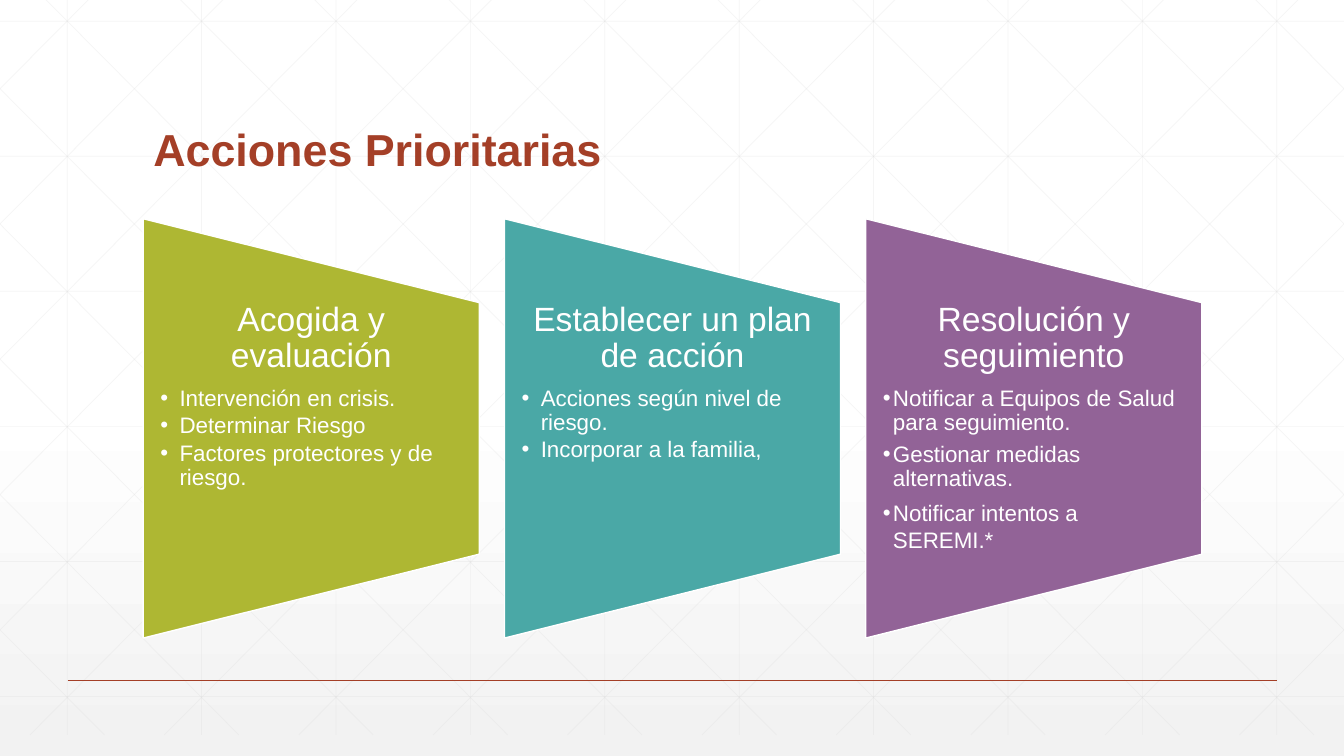
from lxml import etree
from pptx import Presentation
from pptx import util as u
from pptx.dml.color import RGBColor
from pptx.enum import shapes, text
from pptx.oxml import ns

WIDTH, HEIGHT = 13.33, 7.5
FONT = "Arial"
WHITE = RGBColor(0xFF, 0xFF, 0xFF)
MIST = RGBColor(0xF2, 0xF2, 0xF2)
GRID = RGBColor(0xD9, 0xD9, 0xD9)
BRICK = RGBColor(0xA4, 0x3F, 0x27)
OLIVE = RGBColor(0xAE, 0xB7, 0x33)
TEAL = RGBColor(0x4A, 0xA8, 0xA6)
PURPLE = RGBColor(0x92, 0x63, 0x97)

LOOSE = {"indent": 0.1, "after": 5.6, "spacing": 0.9}
TIGHT = {"indent": 0.19, "after": 2.4, "spacing": 0.9}
LAST = {"indent": 0.1, "after": 0, "spacing": 1.0}

ACTIONS = [
    (OLIVE, "Acogida y evaluación", [
        ("Intervención en crisis.", TIGHT),
        ("Determinar Riesgo", TIGHT),
        ("Factores protectores y de riesgo.", TIGHT),
    ]),
    (TEAL, "Establecer un plan de acción", [
        ("Acciones según nivel de riesgo.", TIGHT),
        ("Incorporar a la familia,", TIGHT),
    ]),
    (PURPLE, "Resolución y seguimiento", [
        ("Notificar a Equipos de Salud para seguimiento.", LOOSE),
        ("Gestionar medidas alternativas.", LOOSE),
        ("Notificar intentos a SEREMI.*", LAST),
    ]),
]


def add_line(page, start, end, color, weight, opacity=100):
    line = page.shapes.add_connector(
        shapes.MSO_CONNECTOR.STRAIGHT, *map(u.Inches, (*start, *end)))
    line.line.color.rgb = color
    line.line.width = u.Pt(weight)
    properties = line._element.spPr
    if opacity < 100:
        shade = properties.find(".//" + ns.qn("a:srgbClr"))
        etree.SubElement(shade, ns.qn("a:alpha")).set("val", str(opacity * 1000))
    etree.SubElement(properties, ns.qn("a:effectLst"))


def add_span(para, words, size, color, bold=False):
    span = para.add_run()
    span.text = words
    span.font.name = FONT
    span.font.size = u.Pt(size)
    span.font.bold = bold
    span.font.color.rgb = color


def paint_background(page):
    fill = page.background.fill
    fill.gradient()
    fill.gradient_angle = 270
    for stop, position, color in zip(fill.gradient_stops, (0.53, 1), (WHITE, MIST)):
        stop.position = position
        stop.color.rgb = color


def draw_grid(page, top, height):
    step = WIDTH / 10
    run = 7.45
    bottom = top + height
    grid = {"color": GRID, "weight": 0.5, "opacity": 25}
    for column in range(10):
        x = step * (column + 0.5)
        add_line(page, (x, top), (x, bottom), **grid)
    for row in range(6):
        y = 0.21 + 1.34 * row
        add_line(page, (0, y), (WIDTH, y), **grid)
    for diagonal in range(-5, 10):
        origin = 0.25 + step * diagonal
        ends = [(x, top + (x - origin) * height / run)
                for x in (max(origin, 0), min(origin + run, WIDTH))]
        add_line(page, *ends, **grid)
        add_line(page, *[(WIDTH - x, y) for x, y in ends], **grid)


def place_title(page, left, top, width, height):
    title = page.shapes.title
    page.shapes._spTree.append(title._element)
    title.left, title.top, title.width, title.height = map(
        u.Inches, (left, top, width, height))
    frame = title.text_frame
    frame.auto_size = text.MSO_AUTO_SIZE.NONE
    frame.vertical_anchor = text.MSO_ANCHOR.BOTTOM
    para = frame.paragraphs[0]
    para.alignment = text.PP_ALIGN.LEFT
    para.line_spacing = 0.9
    add_span(para, "Acciones Prioritarias", 32, BRICK, bold=True)


def add_bullet(para, indent):
    properties = para._p.get_or_add_pPr()
    properties.set("marL", str(u.Inches(indent)))
    properties.set("indent", str(-u.Inches(indent)))
    etree.SubElement(properties, ns.qn("a:buFont")).set("typeface", FONT)
    etree.SubElement(properties, ns.qn("a:buChar")).set("char", "•")


def draw_action(page, left, top, width, height, color, heading, items):
    panel = page.shapes.add_shape(
        shapes.MSO_SHAPE.FLOWCHART_MANUAL_OPERATION,
        u.Inches(left + (width - height) / 2), u.Inches(top + (height - width) / 2),
        u.Inches(height), u.Inches(width))
    panel.rotation = 270
    panel.shadow.inherit = False
    panel.fill.solid()
    panel.fill.fore_color.rgb = color
    panel.line.color.rgb = WHITE
    panel.line.width = u.Pt(1)

    box = page.shapes.add_textbox(
        u.Inches(left), u.Inches(top + height / 5),
        u.Inches(width), u.Inches(height * 3 / 5))
    frame = box.text_frame
    frame.word_wrap = True
    frame.margin_left = frame.margin_right = u.Inches(0.17)
    frame.margin_top = frame.margin_bottom = 0
    para = frame.paragraphs[0]
    para.alignment = text.PP_ALIGN.CENTER
    para.line_spacing = 0.9
    para.space_after = u.Pt(8.4)
    add_span(para, heading, 24, WHITE)
    for words, style in items:
        para = frame.add_paragraph()
        para.alignment = text.PP_ALIGN.LEFT
        para.line_spacing = style["spacing"]
        para.space_after = u.Pt(style["after"])
        add_bullet(para, style["indent"])
        add_span(para, words, 16, WHITE)


def draw_actions(page, left, top, width, height):
    gap = 0.25
    panel_width = (width - gap * (len(ACTIONS) - 1)) / len(ACTIONS)
    for index, action in enumerate(ACTIONS):
        draw_action(page, left + index * (panel_width + gap), top,
                    panel_width, height, *action)


def main():
    deck = Presentation()
    deck.slide_width = u.Inches(WIDTH)
    deck.slide_height = u.Inches(HEIGHT)
    page = deck.slides.add_slide(deck.slide_layouts[5])
    paint_background(page)
    draw_grid(page, -0.21, 7.5)
    add_line(page, (0.67, 6.75), (12.67, 6.75), BRICK, 1)
    place_title(page, 1.42, 0.55, 10.5, 1.25)
    draw_actions(page, 1.42, 2.17, 10.5, 4.16)
    deck.save("out.pptx")


if __name__ == "__main__":
    main()
